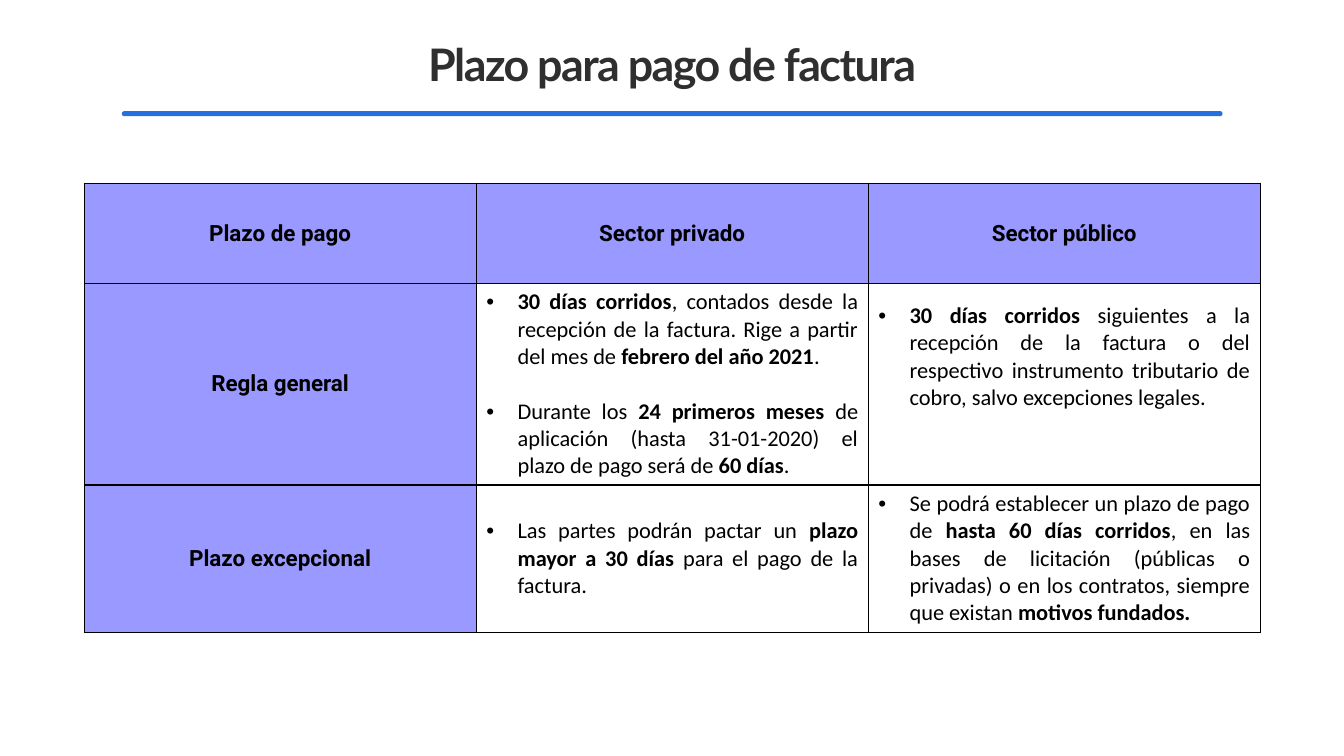
from lxml.etree import SubElement
from pptx import Presentation
from pptx.dml.color import RGBColor
from pptx.enum.shapes import MSO_SHAPE as Preset
from pptx.enum.text import MSO_ANCHOR as Anchor, PP_ALIGN as Align
from pptx.oxml.ns import qn
from pptx.util import Cm, Pt

BLACK = RGBColor(0x00, 0x00, 0x00)
WHITE = RGBColor(0xFF, 0xFF, 0xFF)
CHARCOAL = RGBColor(0x2F, 0x2F, 0x2F)
BLUE = RGBColor(0x25, 0x6F, 0xDF)
LAVENDER = RGBColor(0x99, 0x99, 0xFF)

TITLE_FORMAT = {"name": "Lato", "size": Pt(32), "bold": True}
LABEL_FORMAT = {"name": "Roboto", "size": Pt(16), "bold": True}
BODY_FORMAT = {"name": "Calibri", "size": Pt(16)}

COLUMN_WIDTH = Cm(9.88)
ROW_HEIGHTS = [Cm(2.52), Cm(5.08), Cm(3.71)]
BULLET_INDENT = Cm(0.79)

# Bold passages stand between asterisks.
TERMS = [
    ["Plazo de pago", "Sector privado", "Sector público"],
    [
        "Regla general",
        [
            "*30 días corridos*, contados desde la recepción de la factura. "
            "Rige a partir del mes de *febrero del año 2021*.",
            "Durante los *24 primeros meses* de aplicación (hasta 31-01-2020) "
            "el plazo de pago será de *60 días*.",
        ],
        [
            "*30 días corridos* siguientes a la recepción de la factura o del "
            "respectivo instrumento tributario de cobro, salvo excepciones legales.",
        ],
    ],
    [
        "Plazo excepcional",
        ["Las partes podrán pactar un *plazo mayor a 30 días* para el pago de la factura."],
        [
            "Se podrá establecer un plazo de pago de *hasta 60 días corridos*, "
            "en las bases de licitación (públicas o privadas) o en los contratos, "
            "siempre que existan *motivos fundados.*",
        ],
    ],
]


class SlideBuilder:
    def __init__(self, slide):
        self.slide = slide

    def style_font(self, font, formats, color):
        for name, value in formats.items():
            setattr(font, name, value)
        font.color.rgb = color

    def title(self, text, left, top, width, height):
        frame = self.slide.shapes.add_textbox(left, top, width, height).text_frame
        frame.word_wrap = True
        frame.vertical_anchor = Anchor.MIDDLE
        frame.margin_left = frame.margin_right = 0
        paragraph = frame.paragraphs[0]
        paragraph.alignment = Align.CENTER
        run = paragraph.add_run()
        run.text = text
        self.style_font(run.font, TITLE_FORMAT, CHARCOAL)
        run.font._element.set("spc", "-110")

    def rule(self, left, top, width, height):
        shape = self.slide.shapes.add_shape(Preset.ROUNDED_RECTANGLE, left, top, width, height)
        shape.shadow.inherit = False
        shape.adjustments[0] = 0.5
        shape.fill.solid()
        shape.fill.fore_color.rgb = BLUE
        shape.line.fill.background()

    def table(self, rows, left, top):
        width = COLUMN_WIDTH * len(rows[0])
        frame = self.slide.shapes.add_table(
            len(rows), len(rows[0]), left, top, width, sum(ROW_HEIGHTS)
        )
        table = frame.table
        for column in table.columns:
            column.width = COLUMN_WIDTH
        for row, height in zip(table.rows, ROW_HEIGHTS):
            row.height = height
        for row, contents in zip(table.rows, rows):
            for cell, content in zip(row.cells, contents):
                is_label = isinstance(content, str)
                self.cell_box(cell, LAVENDER if is_label else WHITE)
                if is_label:
                    self.label(cell, content)
                else:
                    self.bullets(cell, content)
        return table

    def cell_box(self, cell, color):
        """Give a cell its black borders, fill and vertical anchor."""
        properties = cell._tc.get_or_add_tcPr()
        for side in ("a:lnL", "a:lnR", "a:lnT", "a:lnB"):
            line = SubElement(properties, qn(side), w=str(Pt(1)))
            fill = SubElement(line, qn("a:solidFill"))
            SubElement(fill, qn("a:srgbClr"), val=str(BLACK))
        cell.fill.solid()
        cell.fill.fore_color.rgb = color
        cell.vertical_anchor = Anchor.MIDDLE

    def label(self, cell, text):
        paragraph = cell.text_frame.paragraphs[0]
        paragraph.alignment = Align.CENTER
        run = paragraph.add_run()
        run.text = text
        self.style_font(run.font, LABEL_FORMAT, BLACK)

    def bullets(self, cell, items):
        frame = cell.text_frame
        for index, item in enumerate(items):
            paragraph = frame.add_paragraph() if index else frame.paragraphs[0]
            properties = paragraph._p.get_or_add_pPr()
            properties.set("marL", str(BULLET_INDENT))
            properties.set("indent", str(-BULLET_INDENT))
            SubElement(properties, qn("a:buFont"), typeface="Arial")
            SubElement(properties, qn("a:buChar"), char="•")
            paragraph.alignment = Align.JUSTIFY
            if index:
                paragraph.space_before = Pt(19.5)
            for position, text in enumerate(item.split("*")):
                if text:
                    run = paragraph.add_run()
                    run.text = text
                    self.style_font(run.font, BODY_FORMAT, BLACK)
                    run.font.bold = position % 2 == 1


def main():
    presentation = Presentation()
    presentation.slide_width = Cm(33.87)
    presentation.slide_height = Cm(19.05)
    builder = SlideBuilder(presentation.slides.add_slide(presentation.slide_layouts[6]))
    builder.title("Plazo para pago de factura", Cm(4.42), Cm(0.56), Cm(25.04), Cm(2.08))
    builder.rule(Cm(3.07), Cm(2.8), Cm(27.74), Cm(0.13))
    table = builder.table(TERMS, Cm(2.12), Cm(4.62))
    table.cell(1, 2).margin_bottom = Cm(1.5)
    presentation.save("out.pptx")


if __name__ == "__main__":
    main()
